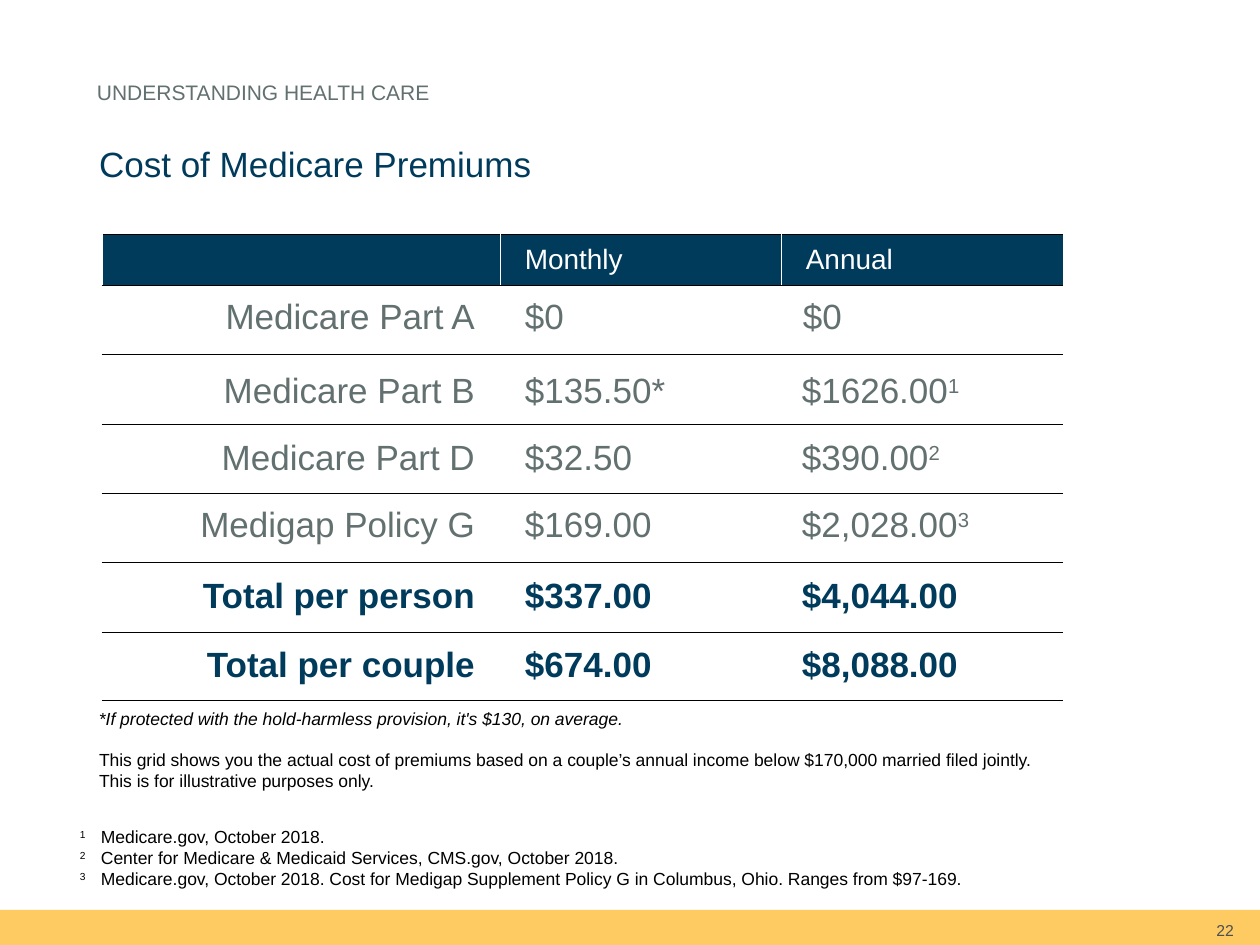
from lxml import etree
from pptx import Presentation
from pptx import util as u
from pptx.dml.color import RGBColor
from pptx.enum import shapes, text
from pptx.oxml.ns import qn

NAVY = RGBColor(0x00, 0x3B, 0x5C)
GREY = RGBColor(0x62, 0x70, 0x6F)
DARK = RGBColor(0x4D, 0x4F, 0x53)
GOLD = RGBColor(0xFD, 0xBA, 0x2E)
BLACK = RGBColor(0, 0, 0)
WHITE = RGBColor(0xFF, 0xFF, 0xFF)

PLAIN_TABLE = "{2D5ABB26-0587-4C30-8999-92F81FD0307C}"
LEFT, RIGHT = text.PP_ALIGN.LEFT, text.PP_ALIGN.RIGHT
TOP, MIDDLE, BOTTOM = (text.MSO_ANCHOR.TOP, text.MSO_ANCHOR.MIDDLE,
                       text.MSO_ANCHOR.BOTTOM)


def px(n):
    return u.Emu(round(n * 914400 / 126))


class Deck:
    font = "Arial"

    def __init__(self):
        self.prs = Presentation()
        self.prs.slide_width, self.prs.slide_height = px(1260), px(945)
        self.s = self.prs.slides.add_slide(self.prs.slide_layouts[5])

    def paragraph(self, p, runs, size, color, align=LEFT, bold=False,
                  italic=False, indent=(0, 0)):
        """Fill p from (text, is_superscript) runs; indent is (left, first line)."""
        p.alignment = align
        if any(indent):
            pPr = p._p.get_or_add_pPr()
            pPr.set("marL", str(px(indent[0])))
            pPr.set("indent", str(px(indent[1])))
        for words, raised in runs:
            r = p.add_run()
            r.text = words
            f = r.font
            f.name, f.size, f.bold, f.italic = self.font, u.Pt(size), bold, italic
            f.color.rgb = color
            if raised:
                r._r.get_or_add_rPr().set("baseline", "30000")

    def fill_frame(self, sp, box, paragraphs, size, color, anchor=TOP,
                   insets=(13, 6, 13, 6), **style):
        sp.left, sp.top, sp.width, sp.height = map(px, box)
        tf = sp.text_frame
        tf.word_wrap, tf.auto_size = True, text.MSO_AUTO_SIZE.NONE
        tf.vertical_anchor = anchor
        (tf.margin_left, tf.margin_top,
         tf.margin_right, tf.margin_bottom) = map(px, insets)
        for i, runs in enumerate(paragraphs):
            p = tf.add_paragraph() if i else tf.paragraphs[0]
            self.paragraph(p, runs, size, color, **style)

    def title(self, words, box, size, color):
        self.fill_frame(self.s.shapes.title, box, [[(words, False)]], size, color)

    def text(self, box, paragraphs, size, color, **style):
        sp = self.s.shapes.add_textbox(0, 0, 0, 0)
        self.fill_frame(sp, box, paragraphs, size, color, **style)

    def bar(self, box, color, opacity):
        sp = self.s.shapes.add_shape(shapes.MSO_SHAPE.RECTANGLE, *map(px, box))
        sp.shadow.inherit = False
        sp.line.fill.background()
        sp.fill.solid()
        sp.fill.fore_color.rgb = color
        clr = sp._element.spPr.find(qn("a:solidFill"))[0]
        etree.SubElement(clr, qn("a:alpha")).set("val", str(opacity * 1000))

    def table(self, x, y, widths, heights):
        t = self.s.shapes.add_table(len(heights), len(widths), px(x), px(y),
                                    px(sum(widths)), px(sum(heights))).table
        t.first_row = t.horz_banding = False
        t._tbl.tblPr.find(qn("a:tableStyleId")).text = PLAIN_TABLE
        for col, w in zip(t.columns, widths):
            col.width = px(w)
        for row, h in zip(t.rows, heights):
            row.height = px(h)
        return t

    def cell(self, c, runs, size, color, insets=(25, 13), **style):
        c.vertical_anchor = MIDDLE
        c.margin_left, c.margin_right = map(px, insets)
        c.margin_top = c.margin_bottom = px(6)
        self.paragraph(c.text_frame.paragraphs[0], runs, size, color, **style)

    def borders(self, c):
        """White at the sides, black above and below."""
        tcPr = c._tc.get_or_add_tcPr()
        sides = (("L", WHITE), ("R", WHITE), ("T", BLACK), ("B", BLACK))
        for i, (side, color) in enumerate(sides):
            ln = etree.Element(qn("a:ln" + side), w=str(u.Pt(0.5)))
            fill = etree.SubElement(ln, qn("a:solidFill"))
            etree.SubElement(fill, qn("a:srgbClr")).set("val", str(color))
            tcPr.insert(i, ln)

    def grid(self, x, y, widths, heights, heads):
        t = self.table(x, y, widths, heights)
        for i, row in enumerate(t.rows):
            for c in row.cells:
                c.fill.solid()
                c.fill.fore_color.rgb = WHITE if i else NAVY
                self.borders(c)
        for j, head in enumerate(heads, 1):
            self.cell(t.cell(0, j), [(head, False)], 16, WHITE)

    def premium_row(self, x, y, widths, label, monthly, annual, note="",
                    total=False, indent=0):
        t = self.table(x, y, widths, [71])
        style = {"size": 20, "color": NAVY if total else GREY, "bold": total}
        for c in t.iter_cells():
            c.fill.background()
        annual_runs = [(annual, False)] + ([(note, True)] if note else [])
        self.cell(t.cell(0, 0), [(label, False)], insets=(13, 25), align=RIGHT, **style)
        self.cell(t.cell(0, 1), [(monthly, False)], **style)
        self.cell(t.cell(0, 2), annual_runs, indent=(indent, 0), **style)


def main():
    d = Deck()
    d.bar((0, 910, 1260, 35), GOLD, 75)
    d.text((940, 910, 294, 35), [[("22", False)]], 9, DARK, anchor=MIDDLE,
           insets=(13, 6, 0, 0), align=RIGHT)
    d.text((84, 32, 1091, 73), [[("UNDERSTANDING HEALTH CARE", False)]], 12, GREY,
           anchor=BOTTOM, insets=(13, 6, 13, 0))
    d.title("Cost of Medicare Premiums", (86, 136, 1091, 59), 20, NAVY)

    sources = ("Medicare.gov, October 2018.",
               "Center for Medicare & Medicaid Services, CMS.gov, October 2018.",
               "Medicare.gov, October 2018. Cost for Medigap Supplement Policy G "
               "in Columbus, Ohio. Ranges from $97-169.")
    d.text((67, 820, 1207, 77),
           [[(f"{n}\t", True), (source, False)] for n, source in enumerate(sources, 1)],
           10, BLACK, indent=(21, -21))

    x = 102
    d.grid(x, 234, (398, 281, 282), [50] + [69, 70, 69] * 2, ("Monthly", "Annual"))

    d.text((86, 702, 1207, 34),
           [[("*If protected with the hold-harmless provision, it's $130, on average.",
              False)]], 10, BLACK, italic=True, indent=(16, -16))
    d.text((86, 743, 966, 55),
           [[("This grid shows you the actual cost of premiums based on a couple’s "
              "annual income below $170,000 married filed jointly. This is for "
              "illustrative purposes only.", False)]], 10, BLACK)

    d.premium_row(x, 282, (398, 265, 298), "Medicare Part A", "$0", "$0", indent=13)
    widths = (398, 277, 286)
    for y, label, monthly, annual, note in (
            (356, "Medicare Part B", "$135.50*", "$1626.00", "1"),
            (423, "Medicare Part D", "$32.50", "$390.00", "2"),
            (490, "Medigap Policy G", "$169.00", "$2,028.00", "3")):
        d.premium_row(x, y, widths, label, monthly, annual, note)
    for y, label, monthly, annual in (
            (561, "Total per person", "$337.00", "$4,044.00"),
            (630, "Total per couple", "$674.00", "$8,088.00")):
        d.premium_row(x, y, widths, label, monthly, annual, total=True)
    d.prs.save("out.pptx")


if __name__ == "__main__":
    main()
